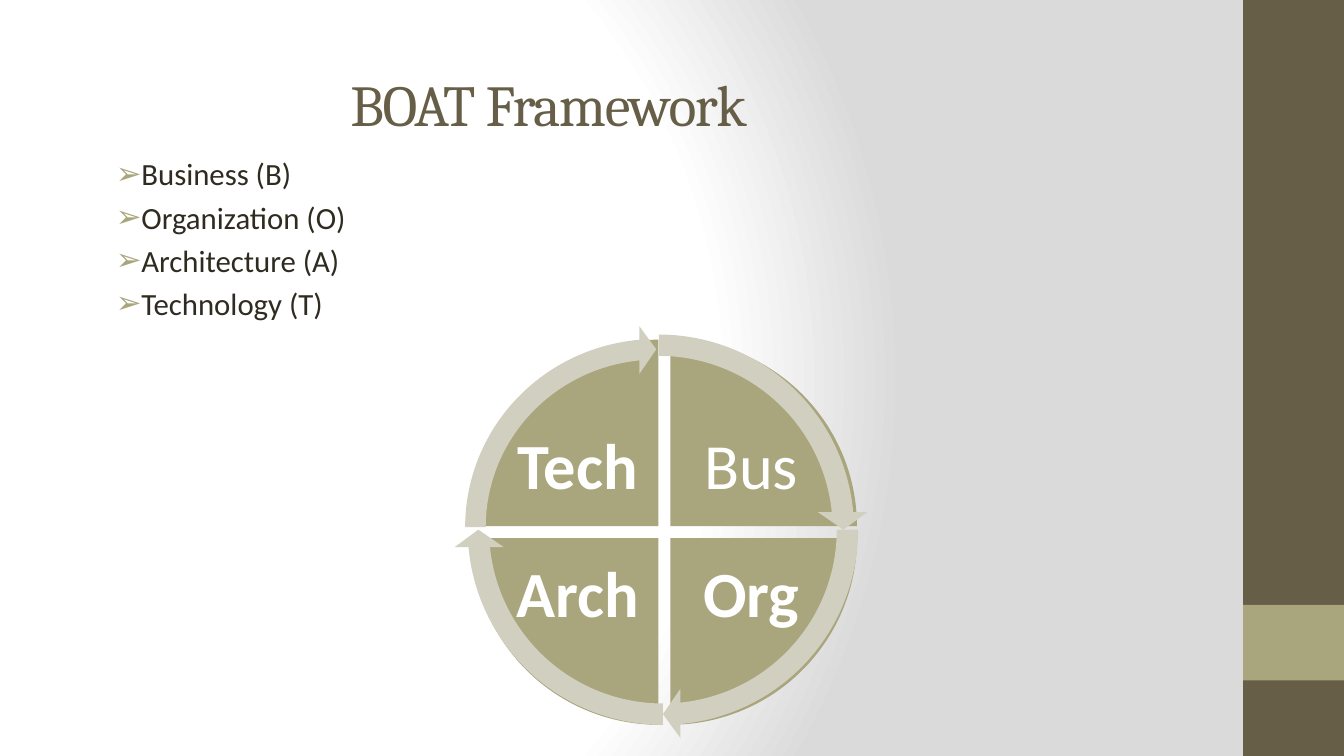
import pptx
import pptx.dml.color
import pptx.enum.shapes
import pptx.enum.text
import pptx.oxml
import pptx.oxml.ns
import pptx.util

Inches = pptx.util.Inches
Pt = pptx.util.Pt
Shapes = pptx.enum.shapes.MSO_SHAPE
Align = pptx.enum.text.PP_ALIGN
Anchor = pptx.enum.text.MSO_ANCHOR
qn = pptx.oxml.ns.qn

BROWN, OLIVE, PALE, INK, WHITE = "675E47", "A9A57C", "D1CFBF", "2F2B20", "FFFFFF"
QUARTER = 54  # a quarter turn, in adjustment units
FULL_TURN = 4 * QUARTER


def color(hex_text):
    return pptx.dml.color.RGBColor.from_string(hex_text)


class SlideBuilder:
    heading_font = "Cambria"
    body_font = "Calibri"

    def __init__(self, page):
        self.page = page

    def background(self, stops):
        """Fill the page with a radial gradient of (percent, colour) stops."""
        self.page.background.fill.gradient()
        default = self.page._element.find(".//" + qn("a:gradFill"))
        stop_xml = "".join(
            f'<a:gs pos="{percent * 1000}"><a:srgbClr val="{shade}"/></a:gs>'
            for percent, shade in stops)
        radial = pptx.oxml.parse_xml(
            f'<a:gradFill {pptx.oxml.ns.nsdecls("a")} rotWithShape="1">'
            f'<a:gsLst>{stop_xml}</a:gsLst><a:path path="circle">'
            '<a:fillToRect l="20000" t="50000" r="100000" b="50000"/>'
            '</a:path></a:gradFill>')
        default.getparent().replace(default, radial)

    def shape(self, kind, left, top, width, height, fill, adjustments=()):
        shape = self.page.shapes.add_shape(
            kind, Inches(left), Inches(top), Inches(width), Inches(height))
        shape.shadow.inherit = False
        shape.fill.solid()
        shape.fill.fore_color.rgb = color(fill)
        shape.line.fill.background()
        for index, value in enumerate(adjustments):
            shape.adjustments[index] = value

    def text_frame(self, left, top, width, height, anchor, inset=None):
        box = self.page.shapes.add_textbox(
            Inches(left), Inches(top), Inches(width), Inches(height))
        frame = box.text_frame
        frame.word_wrap = True
        frame.vertical_anchor = anchor
        if inset is not None:
            frame.margin_left = frame.margin_right = Inches(inset)
            frame.margin_top = frame.margin_bottom = Inches(inset)
        return frame

    def span(self, para, text, size, shade, font, bold=False):
        span = para.add_run()
        span.text = text
        span.font.size = Pt(size)
        span.font.name = font
        span.font.bold = bold
        span.font.color.rgb = color(shade)
        return span

    def title(self, text, left, top, width, height):
        para = self.text_frame(left, top, width, height, Anchor.MIDDLE).paragraphs[0]
        para.alignment = Align.CENTER
        span = self.span(para, text, 41.4, BROWN, self.heading_font)
        span.font._element.set("spc", "-100")

    def bullets(self, items, left, top, width, height):
        frame = self.text_frame(left, top, width, height, Anchor.TOP)
        for index, item in enumerate(items):
            para = frame.add_paragraph() if index else frame.paragraphs[0]
            para.space_before = Pt(4.4)
            self.bullet(para)
            self.span(para, item, 22, INK, self.body_font)

    def bullet(self, para):
        """Give the paragraph a hanging olive arrow bullet."""
        properties = para._p.get_or_add_pPr()
        properties.set("marL", str(Inches(0.38)))
        properties.set("indent", str(Inches(-0.25)))
        names = pptx.oxml.ns.nsdecls("a")
        for xml in (f'<a:buClr {names}><a:srgbClr val="{OLIVE}"/></a:buClr>',
                    f'<a:buFont {names} typeface="Wingdings 2"/>'.replace("Wingdings 2", "Calibri"),
                    f'<a:buChar {names} char="➢"/>'):
            properties.append(pptx.oxml.parse_xml(xml))

    def label(self, text, left, top, bold):
        frame = self.text_frame(left, top, 1.36, 1.01, Anchor.MIDDLE, inset=0.06)
        para = frame.paragraphs[0]
        para.alignment = Align.CENTER
        para.line_spacing = 0.9
        para.space_after = Pt(16.1)
        self.span(para, text, 46, WHITE, self.body_font, bold)

    def quadrant(self, text, start, right, lower, bold):
        """Draw a quarter pie and its label."""
        self.shape(Shapes.PIE, 4.8 if right else 4.68, 3.49 if lower else 3.37,
                   3.7, 3.7, OLIVE, (start, (start + QUARTER) % FULL_TURN))
        self.label(text, 6.77 if right else 5.05, 5.41 if lower else 4.14, bold)

    def cycle_arrow(self, start, left, top, width, height):
        self.shape(Shapes.CIRCULAR_ARROW, left, top, width, height, PALE,
                   (0.051, 3.275, start + 50.725, start, 0.059))


def main():
    deck = pptx.Presentation()
    deck.slide_width, deck.slide_height = Inches(13.33), Inches(7.5)
    slide = SlideBuilder(deck.slides.add_slide(deck.slide_layouts[6]))

    slide.background([(0, WHITE), (75, WHITE), (100, "DADADA")])
    slide.shape(Shapes.RECTANGLE, 12.33, 0, 1, 7.5, BROWN)
    slide.shape(Shapes.RECTANGLE, 12.33, 6, 1, 0.75, OLIVE)
    slide.title("BOAT Framework", 0.74, 0.67, 9.4, 0.71)
    slide.bullets(["Business (B)", "Organization (O)", "Architecture (A)",
                   "Technology (T)"], 0.92, 1.49, 6.57, 5.81)

    # Clockwise from the top: label, right half, lower half, bold, arrow frame
    quadrants = [
        ("Bus", True, False, False, (4.46, 3.18, 4.15, 4.15)),
        ("Org", True, True, True, (4.5, 3.18, 4.15, 4.15)),
        ("Arch", False, True, True, (4.5, 3.18, 4.15, 4.15)),
        ("Tech", False, False, True, (4.48, 3.23, 4.06, 4)),
    ]
    starts = [(3 + turn) % 4 * QUARTER for turn in range(4)]
    for start, (text, right, lower, bold, _) in zip(starts, quadrants):
        slide.quadrant(text, start, right, lower, bold)
    for start, (*_, arrow_frame) in zip(starts, quadrants):
        slide.cycle_arrow(start, *arrow_frame)

    deck.save("out.pptx")


if __name__ == "__main__":
    main()
